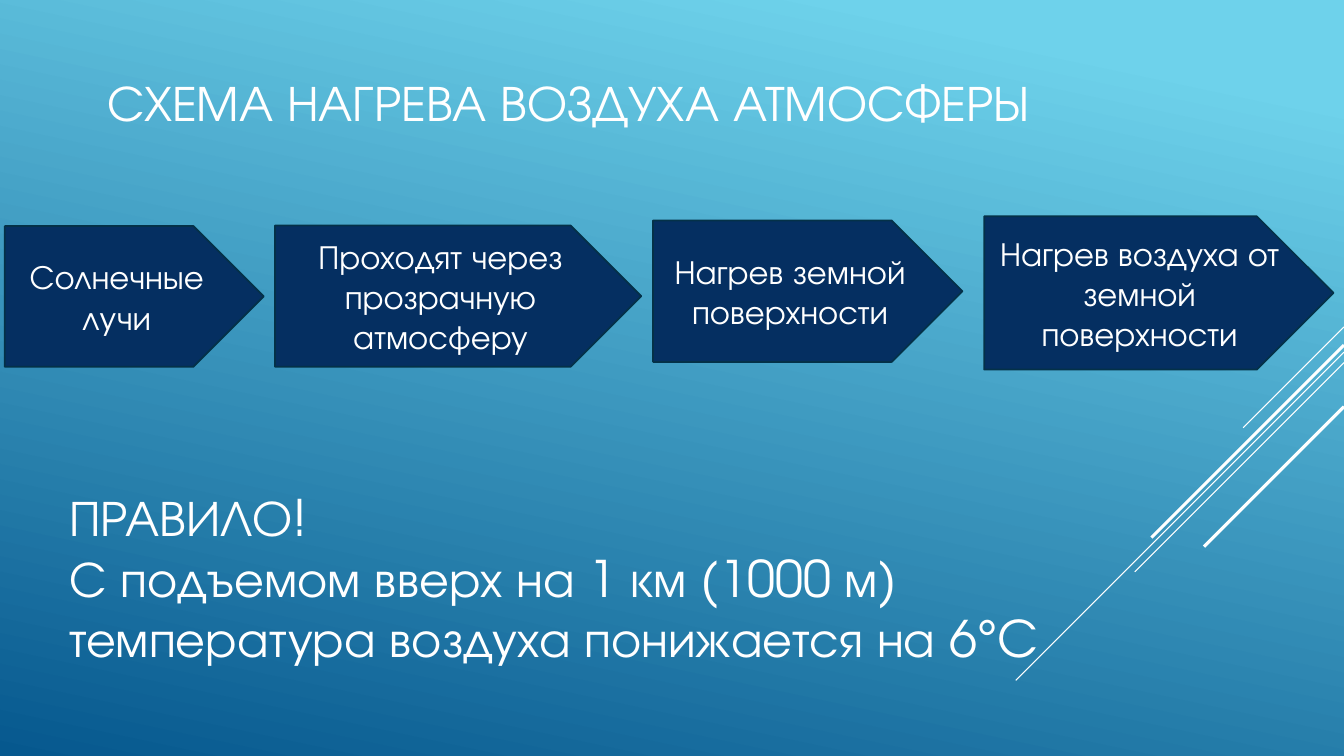
from dataclasses import dataclass

from lxml.etree import SubElement
from pptx import Presentation
from pptx.dml.color import RGBColor
from pptx.enum.shapes import MSO_CONNECTOR, MSO_SHAPE
from pptx.enum.text import MSO_ANCHOR, PP_ALIGN
from pptx.oxml.ns import qn
from pptx.util import Pt


@dataclass(frozen=True)
class Theme:
    font: str = "TeX Gyre Adventor"
    heading_size: float = 36
    step_size: float = 24
    white: RGBColor = RGBColor(0xFF, 0xFF, 0xFF)
    step_fill: RGBColor = RGBColor(0x05, 0x2F, 0x61)
    step_line: RGBColor = RGBColor(0x04, 0x31, 0x48)
    sky_light: RGBColor = RGBColor(0x6E, 0xD2, 0xEB)
    sky_dark: RGBColor = RGBColor(0x06, 0x58, 0x8E)


@dataclass(frozen=True)
class Box:
    left: float
    top: float
    width: float
    height: float

    def lengths(self):
        return Pt(self.left), Pt(self.top), Pt(self.width), Pt(self.height)


THEME = Theme()
PAGE = Box(0, 0, 960, 540)

TITLE = "СХЕМА НАГРЕВА ВОЗДУХА АТМОСФЕРЫ"
RULE = [
    "ПРАВИЛО!",
    "С подъемом вверх на 1 км (1000 м) температура воздуха понижается на 6°C",
]

# Text, then left, top, width and height within the chain
STEPS = [
    ("Солнечные лучи", Box(0, 7, 185, 100.5)),
    ("Проходят через прозрачную атмосферу", Box(193, 6.5, 261.5, 101)),
    ("Нагрев земной поверхности", Box(463, 3, 221, 101)),
    ("Нагрев воздуха от земной поверхности", Box(699.5, 0, 249.5, 109.5)),
]

# Start below the top of the corner, horizontal run, line width
STREAKS = [
    (0, 72, 0.75),
    (18, 234.5, 0.75),
    (25.5, 149.5, 0.75),
    (13, 137.5, 2.25),
    (57, 100, 2.25),
]


def write_text(frame, lines, size, alignment, anchor):
    frame.word_wrap = True
    frame.vertical_anchor = anchor
    for index, line in enumerate(lines):
        paragraph = frame.paragraphs[0] if index == 0 else frame.add_paragraph()
        paragraph.alignment = alignment
        run = paragraph.add_run()
        run.text = line
        run.font.name = THEME.font
        run.font.size = Pt(size)
        run.font.color.rgb = THEME.white


def paint_background(slide):
    fill = slide.background.fill
    fill.gradient()
    fill.gradient_angle = 258
    colors = ((0.1, THEME.sky_light), (1, THEME.sky_dark))
    for stop, (position, color) in zip(fill.gradient_stops, colors):
        stop.position = position
        stop.color.rgb = color


def add_streaks(slide, box):
    """Diagonal lines that fall at 45 degrees from the right edge of the box."""
    right = box.left + box.width
    for offset, run, width in STREAKS:
        top = box.top + offset
        streak = slide.shapes.add_connector(
            MSO_CONNECTOR.STRAIGHT, Pt(right), Pt(top), Pt(right - run), Pt(top + run)
        )
        streak.line.color.rgb = THEME.white
        streak.line.width = Pt(width)
        SubElement(streak._element.spPr, qn("a:effectLst"))


def add_heading(slide, box, lines, anchor):
    text_box = slide.shapes.add_textbox(*box.lengths())
    write_text(text_box.text_frame, lines, THEME.heading_size, PP_ALIGN.LEFT, anchor)


def add_chain(slide, box):
    """Pentagon arrows, each placed from the corner of the box."""
    for text, place in STEPS:
        area = Box(box.left + place.left, box.top + place.top, place.width, place.height)
        step = slide.shapes.add_shape(MSO_SHAPE.PENTAGON, *area.lengths())
        step.shadow.inherit = False
        step.fill.solid()
        step.fill.fore_color.rgb = THEME.step_fill
        step.line.color.rgb = THEME.step_line
        step.line.width = Pt(1.25)
        write_text(
            step.text_frame, [text], THEME.step_size, PP_ALIGN.CENTER, MSO_ANCHOR.MIDDLE
        )


def build_scheme_slide(presentation, page):
    slide = presentation.slides.add_slide(presentation.slide_layouts[6])
    paint_background(slide)
    # Corner decoration
    add_streaks(slide, Box(page.width - 234.5, 233.5, 234.5, 252.5))
    # Title
    add_heading(slide, Box(70, 13, 782.5, 119), [TITLE], MSO_ANCHOR.MIDDLE)
    # Chain of steps
    add_chain(slide, Box(3.5, 154.5, 949, 109.5))
    # Rule
    add_heading(slide, Box(42.5, 344, 792, 138), RULE, MSO_ANCHOR.TOP)


def main():
    presentation = Presentation()
    presentation.slide_width = Pt(PAGE.width)
    presentation.slide_height = Pt(PAGE.height)
    build_scheme_slide(presentation, PAGE)
    presentation.save("out.pptx")


if __name__ == "__main__":
    main()
